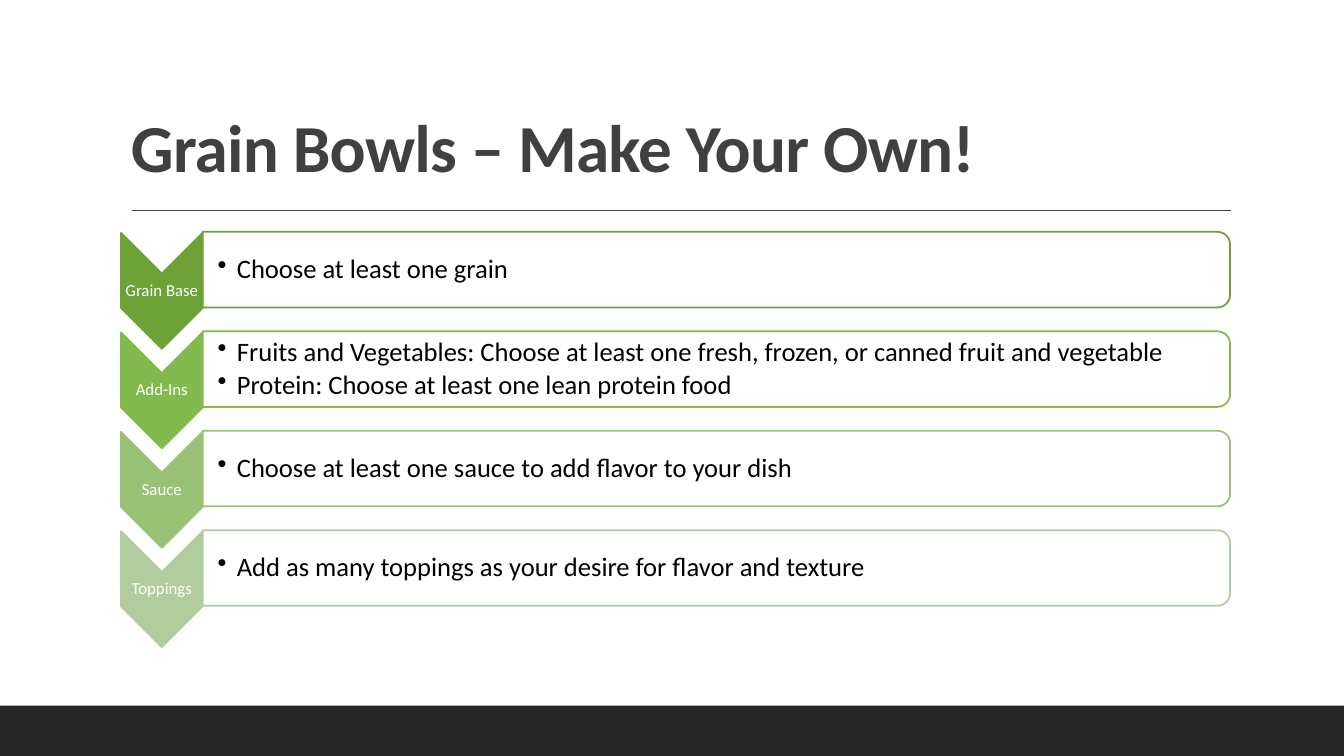
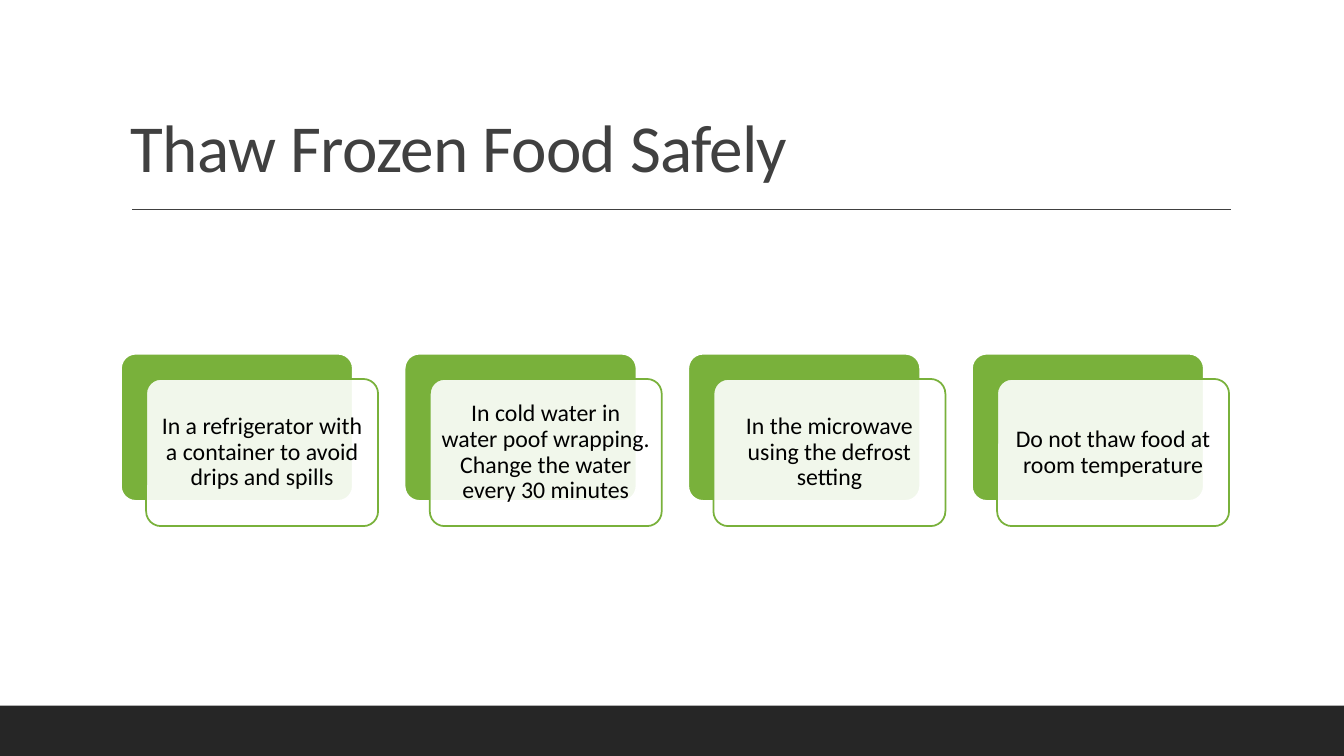
import lxml.etree
import pptx
import pptx.dml.color
import pptx.enum.shapes
import pptx.enum.text
import pptx.oxml.ns
import pptx.util

Inches = pptx.util.Inches
Pt = pptx.util.Pt
SHAPE = pptx.enum.shapes.MSO_SHAPE
ALIGN = pptx.enum.text.PP_ALIGN
ANCHOR = pptx.enum.text.MSO_ANCHOR
color = pptx.dml.color.RGBColor.from_string
qn = pptx.oxml.ns.qn

FONT = "Calibri"
WHITE, BLACK, GRAY, FOOTER = "FFFFFF", "000000", "404040", "262626"
CARD_GREEN = "79B13B"


def add_shape(slide, kind, left, top, width, height, fill, line=None, opacity=100):
    """Add a shape without shadow; opacity is the fill's, in percent."""
    shape = slide.shapes.add_shape(
        kind, Inches(left), Inches(top), Inches(width), Inches(height))
    shape.shadow.inherit = False
    shape.fill.solid()
    shape.fill.fore_color.rgb = color(fill)
    if opacity < 100:
        fill_color = shape.fill._xPr.find(qn("a:solidFill"))[0]
        lxml.etree.SubElement(fill_color, qn("a:alpha"), val=str(opacity * 1000))
    if line:
        shape.line.color.rgb = color(line)
        shape.line.width = Pt(1.25)
    else:
        shape.line.fill.background()
    return shape


def write(box, lines, size, text_color, align, insets, anchor=ANCHOR.MIDDLE):
    """Fill a box with one paragraph per line; insets are left, top, right, bottom."""
    frame = box.text_frame
    frame.word_wrap = True
    frame.vertical_anchor = anchor
    (frame.margin_left, frame.margin_top,
     frame.margin_right, frame.margin_bottom) = [Inches(inset) for inset in insets]
    frame.text = "\n".join(lines)
    for para in frame.paragraphs:
        para.alignment = align
        para.line_spacing = 0.9
        for span in para.runs:
            span.font.name = FONT
            span.font.size = Pt(size)
            span.font.color.rgb = color(text_color)
    return frame


deck = pptx.Presentation()
deck.slide_width, deck.slide_height = Inches(13.33), Inches(7.5)

# Title, rule and footer band
pages = []
for title, bold, rule_top in [("Grain Bowls – Make Your Own!", True, 2.09),
                              ("Thaw Frozen Food Safely", False, 2.08)]:
    page = deck.slides.add_slide(deck.slide_layouts[6])
    pages.append(page)
    box = page.shapes.add_textbox(Inches(1.2), Inches(0.31), Inches(11), Inches(1.59))
    frame = write(box, [title], 48, GRAY, ALIGN.LEFT, (0.1, 0.05, 0.1, 0.05), ANCHOR.BOTTOM)
    span = frame.paragraphs[0].runs[0]
    span.font.bold = bold
    span.font._element.set("spc", "-50")
    rule = page.shapes.add_connector(
        pptx.enum.shapes.MSO_CONNECTOR.STRAIGHT,
        Inches(1.31), Inches(rule_top), Inches(12.21), Inches(rule_top))
    rule.line.color.rgb = color(GRAY)
    rule.line.width = Pt(1)
    lxml.etree.SubElement(rule._element.spPr, qn("a:effectLst"))
    add_shape(page, SHAPE.RECTANGLE, 0, 7, 13.33, 0.5, FOOTER)
bowls, thawing = pages

# Grain bowl steps: a chevron pointing down beside a panel rounded on the right
steps = [
    ("Grain Base", "6EA136", ["Choose at least one grain"]),
    ("Add-Ins", "82BA4D", [
        "Fruits and Vegetables: Choose at least one fresh, frozen, or canned fruit and vegetable",
        "Protein: Choose at least one lean protein food"]),
    ("Sauce", "99C277", ["Choose at least one sauce to add flavor to your dish"]),
    ("Toppings", "B1CD9D", ["Add as many toppings as your desire for flavor and texture"]),
]
row_pitch = 2.96 / 3
for row, (label, green, lines) in enumerate(steps):
    offset = row * row_pitch
    chevron = add_shape(bowls, SHAPE.CHEVRON, 1.03, 2.48 + offset, 1.15, 0.81, green, green)
    chevron.rotation = 90
    box = bowls.shapes.add_textbox(
        Inches(1.2), Inches(2.71 + offset), Inches(0.81), Inches(0.35))
    write(box, [label], 12, WHITE, ALIGN.CENTER, (0.01,) * 4)

    panel = add_shape(bowls, SHAPE.ROUND_2_SAME_RECTANGLE, 6.73, -2.42 + offset,
                      0.75, 10.19, WHITE, green, opacity=90)
    panel.rotation = 90
    box = bowls.shapes.add_textbox(
        Inches(2.01), Inches(2.34 + offset), Inches(10.16), Inches(0.67))
    frame = write(box, lines, 19, BLACK, ALIGN.LEFT, (0.15, 0.01, 0.01, 0.01))
    for para in frame.paragraphs:
        para.space_after = Pt(3)
        properties = para._p.get_or_add_pPr()
        properties.set("marL", str(Inches(0.19)))
        properties.set("indent", str(-Inches(0.19)))
        lxml.etree.SubElement(properties, qn("a:buChar"), char="•")

# Thawing methods: a white card over a green one
methods = [
    "In a refrigerator with a container to avoid drips and spills",
    "In cold water in water poof wrapping. Change the water every 30 minutes",
    "In the microwave using the defrost setting",
    "Do not thaw food at room temperature",
]
card_pitch = 8.44 / 3
card_shift = 0.25
for column, method in enumerate(methods):
    left, top = 1.2 + column * card_pitch, 3.51
    back = add_shape(thawing, SHAPE.ROUNDED_RECTANGLE, left, top, 2.3, 1.46,
                     CARD_GREEN, WHITE)
    front = add_shape(thawing, SHAPE.ROUNDED_RECTANGLE, left + card_shift, top + card_shift,
                      2.3, 1.46, WHITE, CARD_GREEN, opacity=90)
    for card in (back, front):
        card.adjustments[0] = 0.1
    write(front, [method], 17, BLACK, ALIGN.CENTER, (0.07,) * 4)

deck.save("out.pptx")
